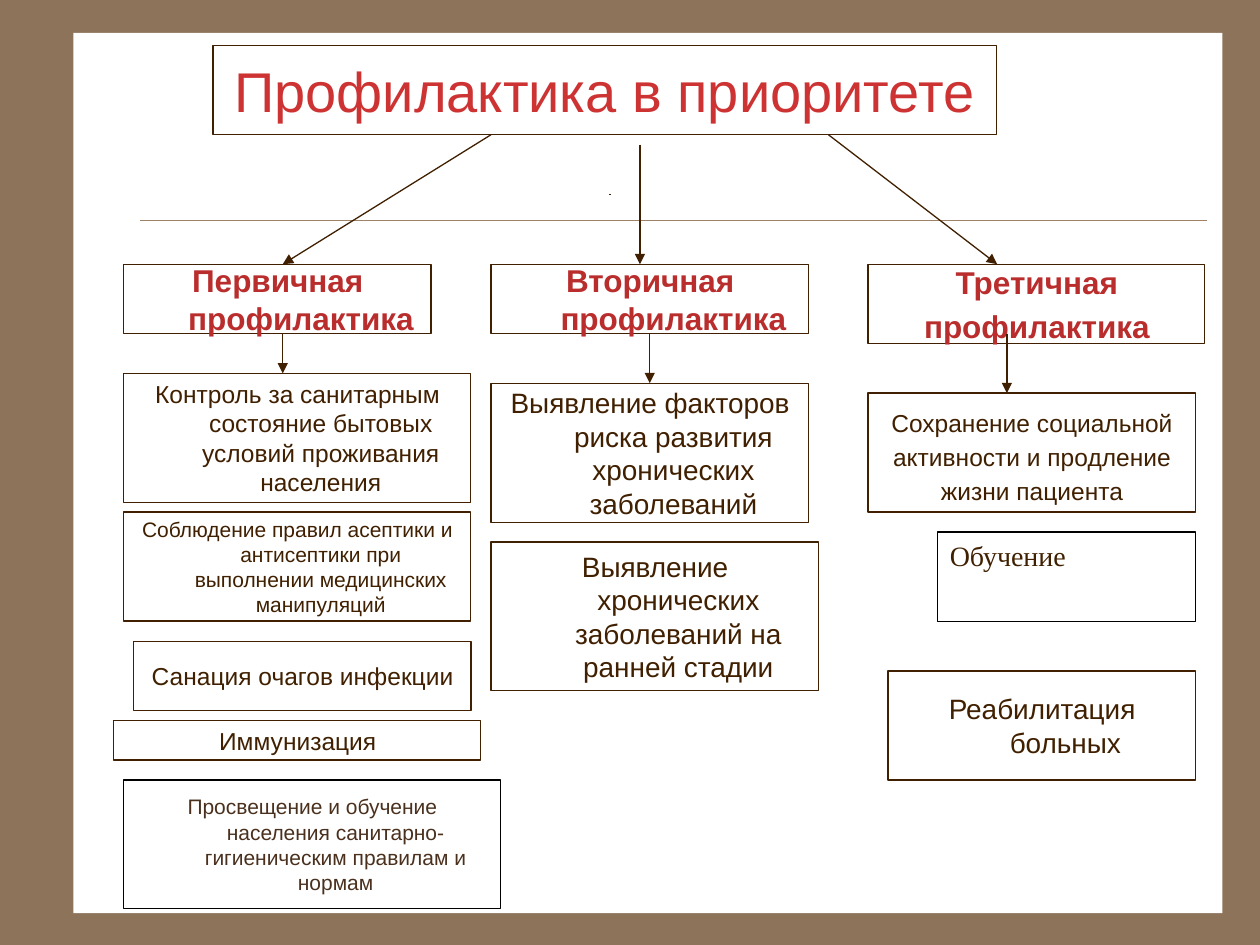
import pptx
import pptx.util
import pptx.dml.color
import pptx.enum.shapes
import pptx.enum.text
import pptx.oxml.ns
from lxml import etree

Pt = pptx.util.Pt
ANCHOR = pptx.enum.text.MSO_ANCHOR
ALIGN = pptx.enum.text.PP_ALIGN
BROWN = "402000"
RED = "BA2D2D"


def rgb(value):
    return pptx.dml.color.RGBColor.from_string(value)


def write(tf, text, size=14, color=BROWN, font="Arial", bold=False,
          align=ALIGN.CENTER, anchor=ANCHOR.MIDDLE, hanging=True, gap=0):
    tf.word_wrap = True
    tf.vertical_anchor = anchor
    tf.margin_left = tf.margin_right = Pt(7.2)
    tf.margin_top = tf.margin_bottom = Pt(3.6)
    for i, line in enumerate(text.split("\n")):
        p = tf.paragraphs[0] if i == 0 else tf.add_paragraph()
        p.alignment = align
        if hanging:
            pPr = p._p.get_or_add_pPr()
            pPr.set("marL", str(Pt(27)))
            pPr.set("indent", str(-Pt(26.5)))
        if i:
            p.space_before = Pt(gap)
        r = p.add_run()
        r.text = line
        r.font.size = Pt(size)
        r.font.name = font
        r.font.bold = bold
        r.font.color.rgb = rgb(color)


class Diagram:
    """Draws boxes and arrows in one style on the current slide."""

    def __init__(self, s, line=BROWN, width=0.75):
        self.s = s
        self.line = line
        self.width = width

    def background(self, color):
        fill = self.s.background.fill
        fill.solid()
        fill.fore_color.rgb = rgb(color)

    def box(self, x, y, w, h, text=None, fill=None, line=None, **fmt):
        sp = self.s.shapes.add_shape(
            pptx.enum.shapes.MSO_SHAPE.RECTANGLE, Pt(x), Pt(y), Pt(w), Pt(h))
        sp.shadow.inherit = False
        if fill:
            sp.fill.solid()
            sp.fill.fore_color.rgb = rgb(fill)
        else:
            sp.fill.background()
        if text:
            sp.line.color.rgb = rgb(line or self.line)
            sp.line.width = Pt(self.width)
            write(sp.text_frame, text, **fmt)
        else:
            sp.line.fill.background()

    def connect(self, x1, y1, x2, y2, arrow=True, color=None, width=None):
        sp = self.s.shapes.add_connector(
            pptx.enum.shapes.MSO_CONNECTOR.STRAIGHT, Pt(x1), Pt(y1), Pt(x2), Pt(y2))
        sp.line.color.rgb = rgb(color or self.line)
        sp.line.width = Pt(width or self.width)
        qn = pptx.oxml.ns.qn
        if arrow:
            etree.SubElement(sp.line._get_or_add_ln(), qn("a:tailEnd"), type="triangle")
        etree.SubElement(sp._element.spPr, qn("a:effectLst"))


def main():
    prs = pptx.Presentation()
    prs.slide_width, prs.slide_height = Pt(720), Pt(540)
    d = Diagram(prs.slides.add_slide(prs.slide_layouts[6]))
    d.background("8C735A")
    d.box(42, 18.8, 656.5, 503, fill="FFFFFF")
    d.connect(80, 126, 690, 126, arrow=False, color="A08366", width=0.25)

    d.box(121.7, 26, 448, 51, "Профилактика в приоритете",
          size=32, color="CD3333", hanging=False)
    d.connect(348.5, 110.9, 348.5, 111.6, arrow=False)

    headings = [
        (70.6, 175.8, 39.7, "Первичная профилактика"),
        (280.6, 181.4, 39.7, "Вторичная профилактика"),
        (496, 192.5, 45.4, "Третичная\nпрофилактика"),
    ]
    for x, w, h, text in headings:
        d.box(x, 151, w, h, text, size=18, color=RED, bold=True, gap=3.6)

    for x1, y1, x2 in [(280.6, 77, 161.6), (365.7, 82.8, 365.7), (473.4, 77, 569.8)]:
        d.connect(x1, y1, x2, 151)
    for x, bottom in [(161.6, 213.4), (371.3, 219), (575.4, 224.7)]:
        d.connect(x, 190.7, x, bottom)

    boxes = [
        (70.6, 213.4, 198.4, 73.7, 14,
         "Контроль за санитарным состояние бытовых условий проживания населения"),
        (70.6, 292.5, 198.4, 62.4, 12,
         "Соблюдение правил асептики и антисептики при выполнении медицинских манипуляций"),
        (76.3, 366.5, 192.8, 39.7, 14, "Санация очагов инфекции"),
        (65, 411.8, 209.8, 22.6, 14, "Иммунизация"),
        (280.6, 219, 181.4, 79.4, 16,
         "Выявление факторов риска развития хронических заболеваний"),
        (280.6, 309.7, 187, 85, 16,
         "Выявление хронических заболеваний на ранней стадии"),
        (507.4, 383.4, 175.8, 62.4, 16, "Реабилитация больных"),
    ]
    for x, y, w, h, size, text in boxes:
        d.box(x, y, w, h, text, size=size)

    d.box(70.6, 445.7, 215.4, 73.7,
          "Просвещение и обучение населения санитарно-гигиеническим правилам и нормам",
          line="000000", size=12, color="4A301D")
    d.box(496, 224.6, 187, 68,
          "Сохранение социальной\nактивности и продление\nжизни пациента",
          gap=2.8, anchor=ANCHOR.BOTTOM)
    d.box(535.7, 304, 147.4, 51, "Обучение", fill="FFFFFF", line="000000", size=16,
          font="Times New Roman", align=ALIGN.LEFT, anchor=ANCHOR.TOP, hanging=False)
    prs.save("out.pptx")


if __name__ == "__main__":
    main()
